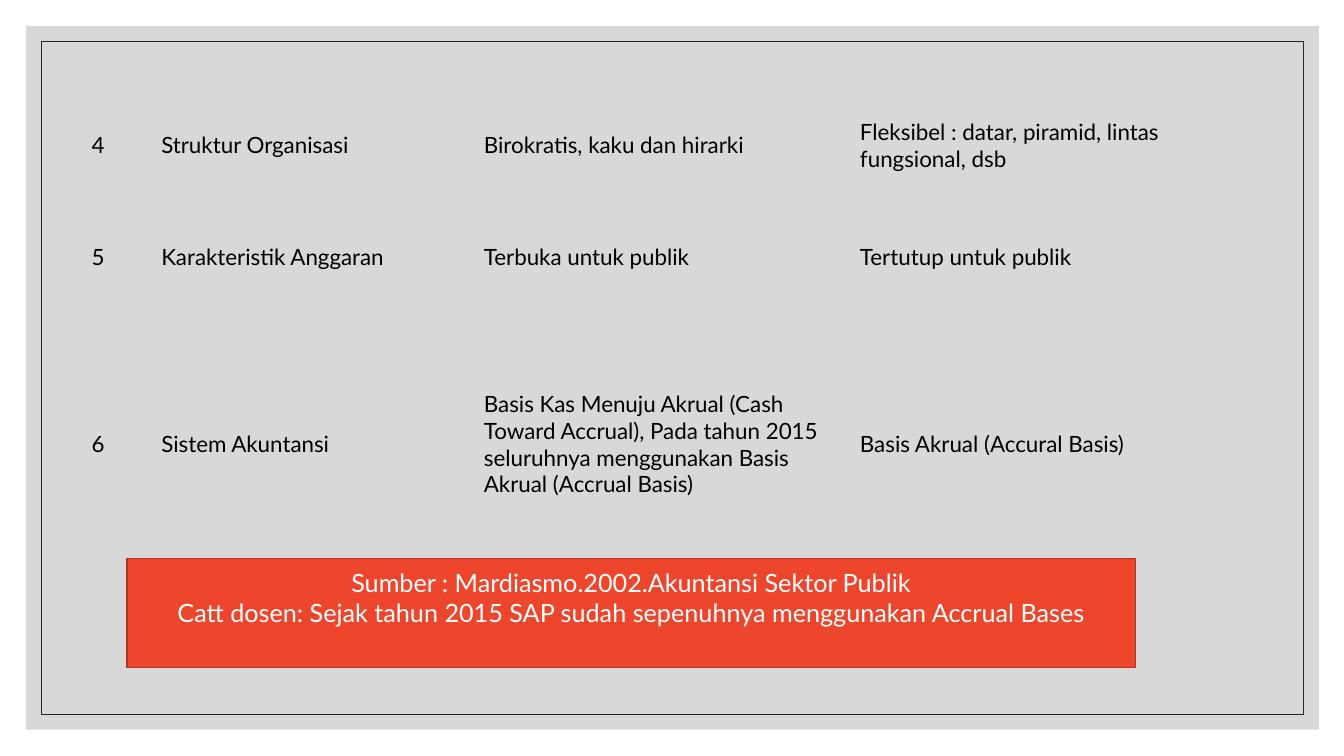
"""Builds a slide comparing public and private sector traits in a table."""
from dataclasses import dataclass
from typing import Optional

from pptx import Presentation
from pptx.dml.color import RGBColor
from pptx.enum.shapes import MSO_SHAPE as Shape
from pptx.enum.text import MSO_ANCHOR as Anchor, PP_ALIGN as Align
from pptx.oxml.ns import qn
from pptx.oxml.xmlchemy import OxmlElement
from pptx.util import Inches, Pt

FONT = "Lato"
NO_STYLE = "{2D5ABB26-0587-4C30-8999-92F81FD0307C}"
COLUMN_WIDTHS = (0.69, 3.2, 3.73, 3.99)
ROW_HEIGHTS = (1.12, 1.1, 2.61)
ROWS = (
    ("4", "Struktur Organisasi", "Birokratis, kaku dan hirarki",
     "Fleksibel : datar, piramid, lintas fungsional, dsb"),
    ("5", "Karakteristik Anggaran", "Terbuka untuk publik", "Tertutup untuk publik"),
    ("6", "Sistem Akuntansi",
     "Basis Kas Menuju Akrual (Cash Toward Accrual), Pada tahun 2015 "
     "seluruhnya menggunakan Basis Akrual (Accrual Basis)",
     "Basis Akrual (Accural Basis)"),
)
SOURCE_LINES = (
    "Sumber : Mardiasmo.2002.Akuntansi Sektor Publik",
    "Catt dosen: Sejak tahun 2015 SAP sudah sepenuhnya menggunakan Accrual Bases",
)


@dataclass(frozen=True)
class Panel:
    left: float
    top: float
    width: float
    height: float
    fill: Optional[str] = None
    opacity: int = 100
    line: Optional[str] = None
    weight: float = 0


BACKDROP = Panel(0.26, 0.26, 12.82, 6.98, fill="BFBFBF", opacity=60)
FRAME = Panel(0.41, 0.41, 12.52, 6.68, line="262626", weight=0.5)
SOURCE_BOX = Panel(1.26, 5.54, 10, 1.08, fill="EE462D", line="B03421", weight=1)


def set_color(target, value: str) -> None:
    target.rgb = RGBColor.from_string(value)


def draw_panel(page, panel: Panel):
    box = page.shapes.add_shape(
        Shape.RECTANGLE, Inches(panel.left), Inches(panel.top),
        Inches(panel.width), Inches(panel.height))
    box.shadow.inherit = False
    if panel.fill:
        box.fill.solid()
        set_color(box.fill.fore_color, panel.fill)
    else:
        box.fill.background()
    if panel.opacity < 100:
        alpha = OxmlElement("a:alpha")
        alpha.set("val", str(panel.opacity * 1000))
        box._element.spPr.find(qn("a:solidFill"))[0].append(alpha)
    if panel.line:
        set_color(box.line.color, panel.line)
        box.line.width = Pt(panel.weight)
    else:
        box.line.fill.background()
    return box


def write(frame, *lines: str, size: float = 16, color: str = "000000",
          align: Align = Align.LEFT) -> None:
    frame.word_wrap = True
    for index, line in enumerate(lines):
        para = frame.add_paragraph() if index else frame.paragraphs[0]
        para.alignment = align
        span = para.add_run()
        span.text = line
        span.font.name = FONT
        span.font.size = Pt(size)
        set_color(span.font.color, color)


def draw_table(page) -> None:
    holder = page.shapes.add_table(
        len(ROWS), len(COLUMN_WIDTHS), Inches(0.86), Inches(0.88),
        Inches(sum(COLUMN_WIDTHS)), Inches(sum(ROW_HEIGHTS)))
    table = holder.table
    table.first_row = table.horz_banding = False
    for style in holder._element.iter(qn("a:tableStyleId")):
        style.text = NO_STYLE
    for column, width in zip(table.columns, COLUMN_WIDTHS):
        column.width = Inches(width)
    for row, height, texts in zip(table.rows, ROW_HEIGHTS, ROWS):
        row.height = Inches(height)
        for cell, text in zip(row.cells, texts):
            cell.fill.background()
            cell.vertical_anchor = Anchor.MIDDLE
            cell.margin_left = cell.margin_right = Inches(0.05)
            cell.margin_top = cell.margin_bottom = Inches(0.03)
            write(cell.text_frame, text)


def main() -> None:
    deck = Presentation()
    deck.slide_width, deck.slide_height = Inches(13.33), Inches(7.5)
    page = deck.slides.add_slide(deck.slide_layouts[6])
    draw_panel(page, BACKDROP)
    draw_panel(page, FRAME)
    draw_table(page)
    source = draw_panel(page, SOURCE_BOX).text_frame
    source.vertical_anchor = Anchor.TOP
    source.margin_top = Inches(0.09)
    write(source, *SOURCE_LINES, size=18, color="FFFFFF", align=Align.CENTER)
    deck.save("out.pptx")


if __name__ == "__main__":
    main()
